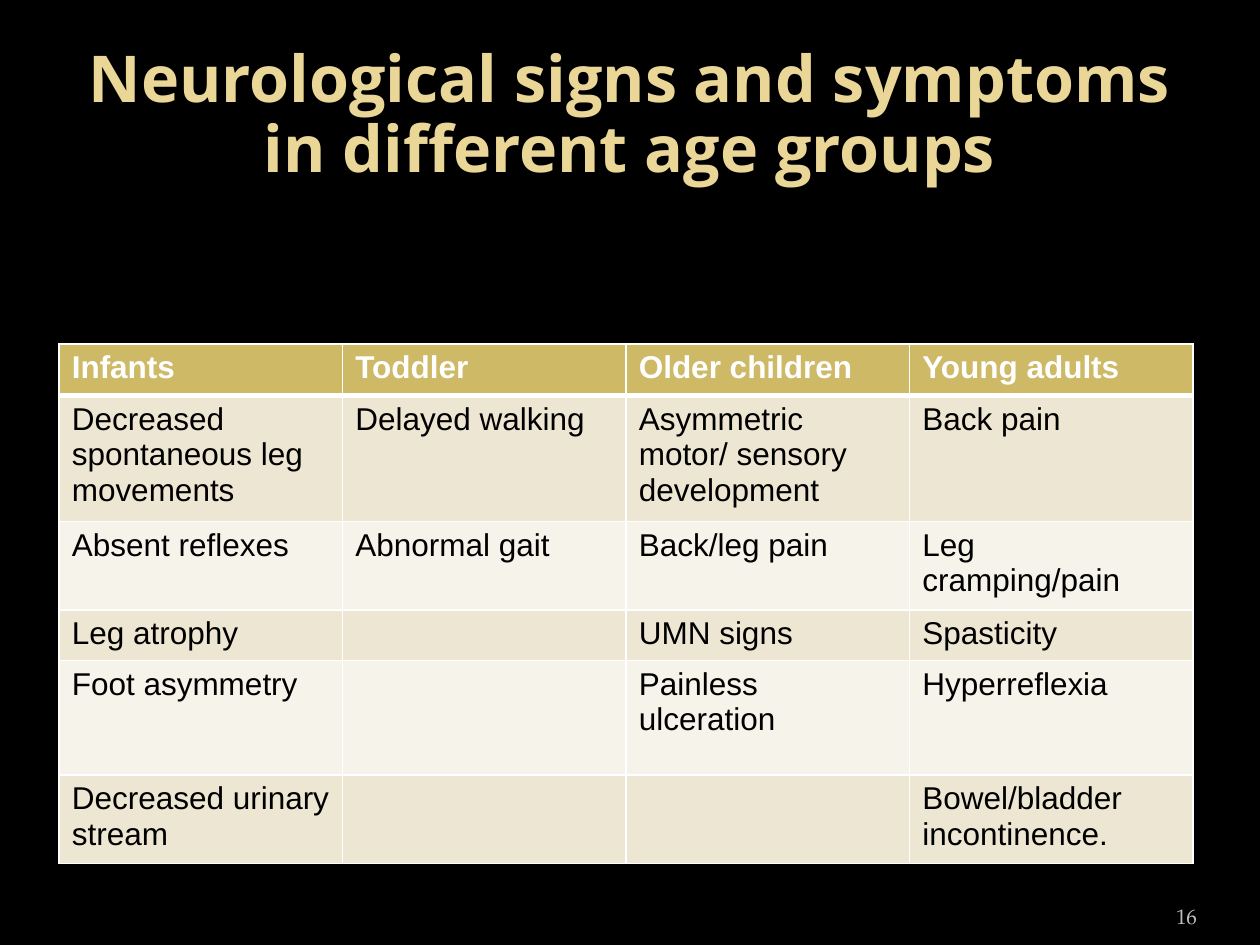
from lxml.etree import SubElement
from pptx import Presentation
from pptx.dml.color import RGBColor
from pptx.enum.text import MSO_ANCHOR, PP_ALIGN
from pptx.oxml.ns import qn
from pptx.util import Inches, Pt

TITLE = "Neurological signs and symptoms in different age groups"
PAGE = "16"
ROWS = [
    ("Infants", "Toddler", "Older children", "Young adults"),
    ("Decreased spontaneous leg movements", "Delayed walking",
     "Asymmetric motor/ sensory development", "Back pain"),
    ("Absent reflexes", "Abnormal gait", "Back/leg pain", "Leg cramping/pain"),
    ("Leg atrophy", "", "UMN signs", "Spasticity"),
    ("Foot asymmetry", "", "Painless ulceration", "Hyperreflexia"),
    ("Decreased urinary stream", "", "", "Bowel/bladder incontinence."),
]
HIGH = [0.41, 0.93, 0.67, 0.4, 0.91, 0.66]
HEX = {"back": "000000", "title": "EAD696", "page": "BDBDBD", "head": "CEB966",
       "odd": "EDE6D3", "even": "F6F3EA", "line": "FFFFFF", "ink": "000000"}
WIDE, TALL = 10, 7.5
EDGE = WIDE * 0.05


def tint(name):
    return RGBColor.from_string(HEX[name])


def write(frame, text, font="Arial", size=18, color="ink", bold=False,
          align=PP_ALIGN.LEFT, space=None):
    para = frame.paragraphs[0]
    para.alignment = align
    para.line_spacing = space
    para.font.size = Pt(size)
    if text:
        run = para.add_run()
        run.text = text
        run.font.name, run.font.size, run.font.bold = font, Pt(size), bold
        run.font.color.rgb = tint(color)


def add_box(slide, text, left, top, width, height, anchor, pad=0.1, **style):
    box = slide.shapes.add_textbox(*map(Inches, (left, top, width, height)))
    frame = box.text_frame
    frame.word_wrap = True
    frame.vertical_anchor = anchor
    frame.margin_left = frame.margin_right = Inches(pad)
    write(frame, text, **style)


def rule(cell, **sides):
    """Draw cell borders; call before the fill, which must follow them."""
    props = cell._tc.get_or_add_tcPr()
    for side, width in sides.items():
        line = SubElement(props, qn(f"a:ln{side}"), w=str(Pt(width)))
        fill = SubElement(line, qn("a:solidFill"))
        SubElement(fill, qn("a:srgbClr"), val=HEX["line"])


def add_grid(slide):
    cols = len(ROWS[0])
    grid = slide.shapes.add_table(
        len(ROWS), cols, Inches(0.47), Inches(2.73),
        Inches(WIDE - 2 * EDGE), Inches(sum(HIGH))).table
    for r, texts in enumerate(ROWS):
        grid.rows[r].height = Inches(HIGH[r])
        head = r == 0
        for c, text in enumerate(texts):
            cell = grid.cell(r, c)
            rule(cell, L=1, R=1, T=3 if r == 1 else 1, B=3 if head else 1)
            cell.fill.solid()
            cell.fill.fore_color.rgb = tint(
                "head" if head else "odd" if r % 2 else "even")
            write(cell.text_frame, text, bold=head,
                  color="line" if head else "ink")


def main():
    deck = Presentation()
    deck.slide_width, deck.slide_height = Inches(WIDE), Inches(TALL)
    slide = deck.slides.add_slide(deck.slide_layouts[6])
    slide.background.fill.solid()
    slide.background.fill.fore_color.rgb = tint("back")

    add_box(slide, TITLE, EDGE, TALL * 0.04, WIDE - 2 * EDGE, 1.25,
            MSO_ANCHOR.MIDDLE, font="Open Sans", size=36.9, color="title",
            bold=True, align=PP_ALIGN.CENTER, space=0.9)
    add_grid(slide)
    add_box(slide, PAGE, WIDE - EDGE - 0.83, 7.02, 0.83, 0.4,
            MSO_ANCHOR.BOTTOM, pad=0, font="TeX Gyre Pagella", size=12,
            color="page", align=PP_ALIGN.RIGHT)
    deck.save("out.pptx")


if __name__ == "__main__":
    main()
